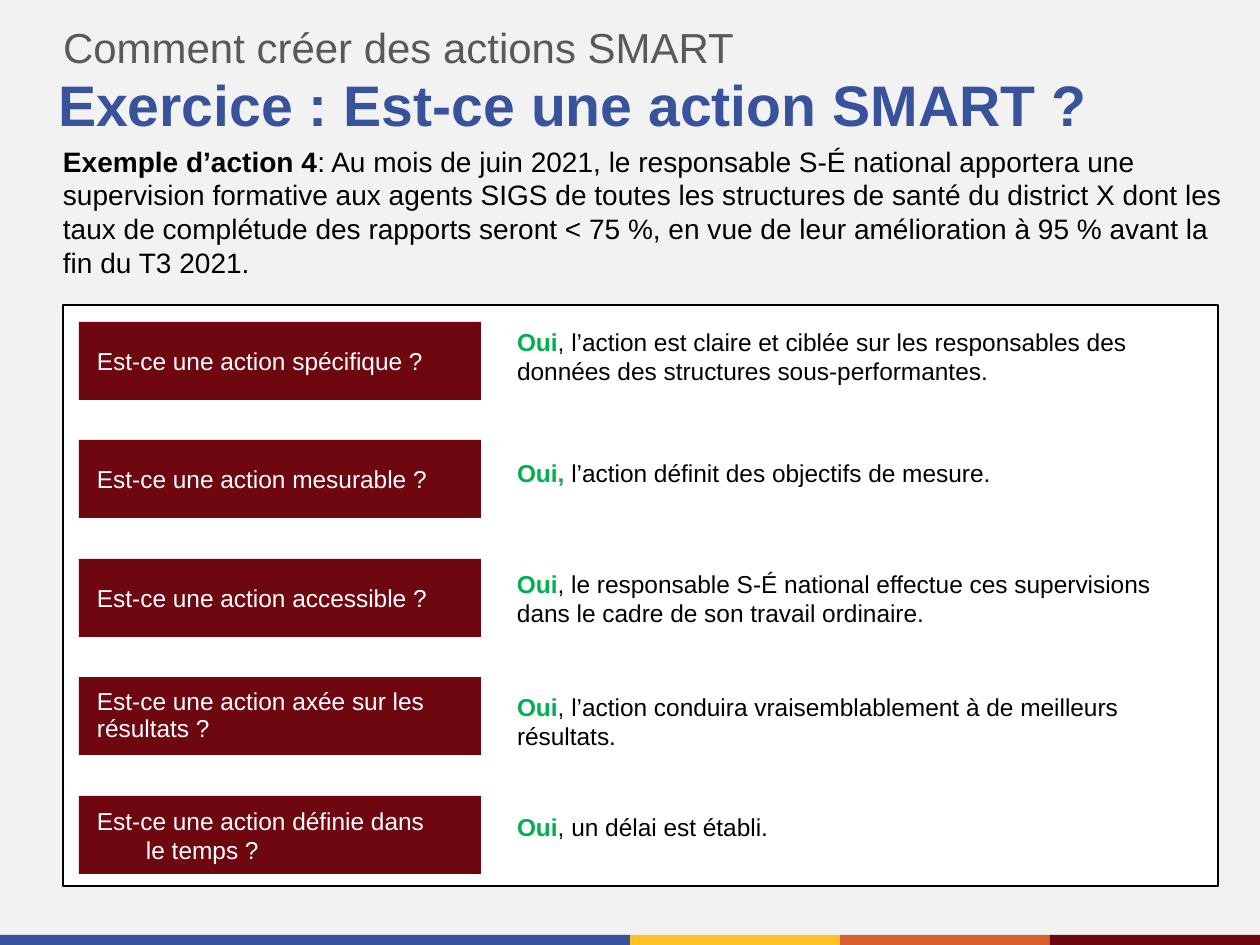
from pptx import Presentation
from pptx.dml.color import RGBColor as RGB
from pptx.enum.shapes import MSO_SHAPE as SHAPE
from pptx.enum.text import MSO_ANCHOR as ANCHOR, MSO_AUTO_SIZE as AUTO, PP_ALIGN as ALIGN
from pptx.util import Pt

PX = 7112
COLORS = {
    "background": "F2F2F2", "blue": "38529C", "yellow": "FDC228",
    "orange": "D8602C", "maroon": "6F0710", "gray": "595959",
    "green": "00B050", "black": "000000", "white": "FFFFFF",
}


def add_rect(x, y, w, h, color):
    sp = s.shapes.add_shape(SHAPE.RECTANGLE, x * PX, y * PX, w * PX, h * PX)
    sp.shadow.inherit = False
    sp.fill.solid()
    sp.fill.fore_color.rgb = RGB.from_string(COLORS[color])
    sp.line.fill.background()
    return sp


def write(sp, runs, size, spacing=1.0, anchor=ANCHOR.TOP, insets=(0, 0)):
    tf = sp.text_frame
    tf.word_wrap = True
    tf.auto_size = AUTO.NONE
    tf.vertical_anchor = anchor
    tf.margin_left, tf.margin_right = [inset * PX for inset in insets]
    tf.margin_top = tf.margin_bottom = 0
    p = tf.paragraphs[0]
    p.alignment = ALIGN.LEFT
    p.line_spacing = spacing
    for text, color, bold in runs:
        r = p.add_run()
        r.text = text
        r.font.name = "Arial"
        r.font.size = Pt(size)
        r.font.bold = bold
        r.font.color.rgb = RGB.from_string(COLORS[color])
    return p


prs = Presentation()
prs.slide_width, prs.slide_height = 1260 * PX, 945 * PX
s = prs.slides.add_slide(prs.slide_layouts[5])
s.background.fill.solid()
s.background.fill.fore_color.rgb = RGB.from_string(COLORS["background"])

stripe_x = 0
for width, color in [(630, "blue"), (210, "yellow"), (210, "orange"), (210, "maroon")]:
    add_rect(stripe_x, 935, width, 10, color)
    stripe_x += width

title = s.shapes.title
title.left, title.top, title.width, title.height = 58 * PX, 77 * PX, 1134 * PX, 62 * PX
write(title, [("Exercice : Est-ce une action SMART ?", "blue", True)], 32, 0.9)

subtitle = s.shapes.add_textbox(63 * PX, 27 * PX, 1134 * PX, 46 * PX)
write(subtitle, [("Comment créer des actions SMART", "gray", False)], 23.5, 0.9)

example = s.shapes.add_textbox(63 * PX, 144 * PX, 1168 * PX, 136 * PX)
write(example, [
    ("Exemple d’action 4", "black", True),
    (": Au mois de juin 2021, le responsable S-É national apportera une supervision "
     "formative aux agents SIGS de toutes les structures de santé du district X dont "
     "les taux de complétude des rapports seront < 75 %, en vue de leur amélioration "
     "à 95 % avant la fin du T3 2021.", "black", False),
], 15.7)

panel = add_rect(63, 305, 1155, 581, "white")
panel.line.color.rgb = RGB.from_string(COLORS["black"])
panel.line.width = Pt(1.5)

rows = [
    ("Est-ce une action spécifique ?", 1.0, 0, 327, 633, "Oui",
     ", l’action est claire et ciblée sur les responsables des données des structures "
     "sous-performantes."),
    ("Est-ce une action mesurable ?", 1.0, 49, 458, 633, "Oui, ",
     "l’action définit des objectifs de mesure."),
    ("Est-ce une action accessible ?", 1.0, 0, 569, 680, "Oui",
     ", le responsable S-É national effectue ces supervisions dans le cadre de son "
     "travail ordinaire."),
    ("Est-ce une action axée sur les résultats ?", 0.9, 0, 692, 644, "Oui",
     ", l’action conduira vraisemblablement à de meilleurs résultats."),
    ("Est-ce une action définie dans le temps ?", 1.0, 49, 812, 633, "Oui",
     ", un délai est établi."),
]
for i, (question, spacing, hang, top, width, verdict, reason) in enumerate(rows):
    bar = add_rect(79, 322 + i * 237 // 2, 402, 78, "maroon")
    p = write(bar, [(question, "white", False)], 13.7, spacing, ANCHOR.MIDDLE, (18, 32))
    pPr = p._p.get_or_add_pPr()
    pPr.set("marL", str(hang * PX))
    pPr.set("indent", str(-hang * PX))

    answer = s.shapes.add_textbox(517 * PX, top * PX, width * PX, 59 * PX)
    write(answer, [(verdict, "green", True), (reason, "black", False)], 13.7)

prs.save("out.pptx")
